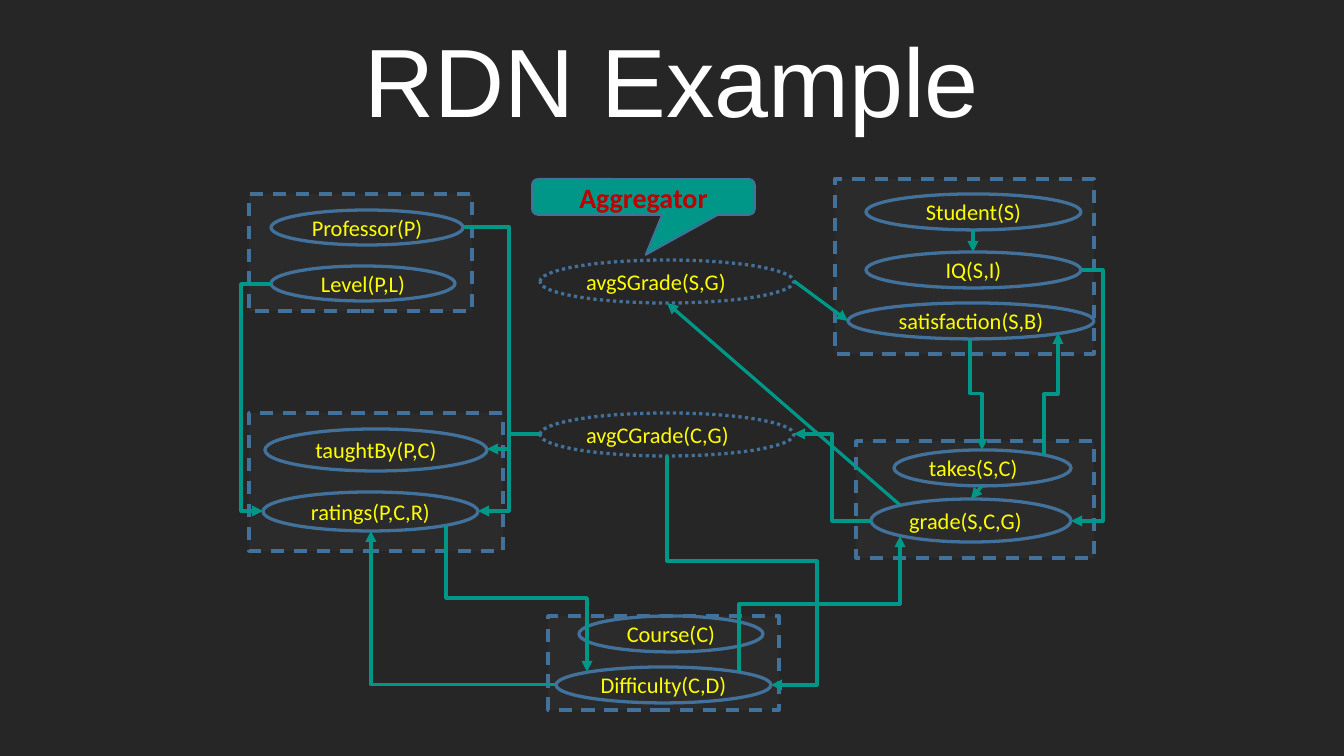
"""Build the RDN Example slide: a relational dependency network diagram."""
from lxml.etree import SubElement
from pptx import Presentation
from pptx.dml.color import RGBColor
from pptx.enum.dml import MSO_LINE
from pptx.enum.shapes import MSO_CONNECTOR as LINK, MSO_SHAPE as SHAPE
from pptx.enum.text import MSO_ANCHOR as ANCHOR, PP_ALIGN as ALIGN
from pptx.oxml.ns import qn
from pptx.util import Pt

BACKDROP = RGBColor(0x26, 0x26, 0x26)
PANEL = RGBColor(0x30, 0x30, 0x30)
OUTLINE = RGBColor(0x42, 0x71, 0x9B)
TEAL = RGBColor(0x00, 0x96, 0x88)
YELLOW = RGBColor(0xFF, 0xFF, 0x00)
RED = RGBColor(0xC0, 0x00, 0x00)
WHITE = RGBColor(0xFF, 0xFF, 0xFF)
SCALE = 914400 / 134.4


def add_box(kind, bounds, width=1.75, text="", align=ALIGN.CENTER, size=12, color=YELLOW):
    box = page.shapes.add_shape(kind, *[round(n * SCALE) for n in bounds])
    box.shadow.inherit = False
    box.fill.background()
    box.line.color.rgb = OUTLINE
    box.line.width = Pt(width)
    frame = box.text_frame
    frame.vertical_anchor = ANCHOR.MIDDLE
    frame.margin_left = frame.margin_right = round(9 * SCALE)
    frame.margin_top = frame.margin_bottom = round(5 * SCALE)
    para = frame.paragraphs[0]
    para.text = text
    para.alignment = align
    para.font.name = "Calibri"
    para.font.size = Pt(size)
    para.font.color.rgb = color
    return box


def add_arrow(kind, start, end):
    arrow = page.shapes.add_connector(kind, *[round(n * SCALE) for n in (*start, *end)])
    arrow.line.color.rgb = TEAL
    arrow.line.width = Pt(1.75)
    properties = arrow._element.spPr
    SubElement(properties.find(qn("a:ln")), qn("a:tailEnd"), type="triangle")
    SubElement(properties, qn("a:effectLst"))
    return properties


deck = Presentation()
deck.slide_width, deck.slide_height = round(1344 * SCALE), round(756 * SCALE)
page = deck.slides.add_slide(deck.slide_layouts[0])
page.background.fill.solid()
page.background.fill.fore_color.rgb = BACKDROP
subtitle = page.placeholders[1]._element
subtitle.getparent().remove(subtitle)

title = page.shapes.title
title.left, title.top, title.width, title.height = [round(n * SCALE) for n in (46, 66, 1252, 84)]
frame = title.text_frame
frame.vertical_anchor = ANCHOR.BOTTOM
frame.margin_left = frame.margin_right = frame.margin_top = frame.margin_bottom = round(13 * SCALE)
para = frame.paragraphs[0]
para.text = "RDN Example"
para.alignment = ALIGN.CENTER
para.font.name = "Arial"
para.font.size = Pt(52)
para.font.color.rgb = WHITE

groups = [
    (835, 179, 259, 175),
    (249, 194, 223, 117),
    (548, 616, 231, 94),
    (249, 413, 254, 138),
    (856, 441, 238, 117),
]
for bounds in groups:
    group = add_box(SHAPE.RECTANGLE, bounds)
    group.fill.solid()
    group.fill.fore_color.rgb = PANEL
    color = group._element.spPr.find(qn("a:solidFill")).find(qn("a:srgbClr"))
    SubElement(color, qn("a:alpha"), val="50000")
    group.line.dash_style = MSO_LINE.DASH

nodes = [
    ("Professor(P)", (271, 210, 192, 35), ALIGN.CENTER),
    ("Level(P,L)", (271, 266, 184, 35), ALIGN.CENTER),
    ("Student(S)", (866, 194, 215, 36), ALIGN.CENTER),
    ("IQ(S,I)", (866, 252, 215, 36), ALIGN.CENTER),
    ("Difficulty(C,D)", (556, 667, 215, 36), ALIGN.CENTER),
    ("Course(C)", (579, 616, 184, 36), ALIGN.CENTER),
    ("taughtBy(P,C)", (265, 429, 222, 42), ALIGN.CENTER),
    ("takes(S,C)", (894, 450, 177, 36), ALIGN.LEFT),
    ("ratings(P,C,R)", (263, 492, 215, 39), ALIGN.CENTER),
    ("satisfaction(S,B)", (848, 303, 246, 36), ALIGN.CENTER),
    ("grade(S,C,G)", (871, 499, 200, 43), ALIGN.LEFT),
]
for text, bounds, align in nodes:
    add_box(SHAPE.OVAL, bounds, text=text, align=align)

for text, top in [("avgCGrade(C,G)", 413), ("avgSGrade(S,G)", 260)]:
    average = add_box(SHAPE.OVAL, (540, top, 254, 43), text=text, align=ALIGN.LEFT)
    average.line.dash_style = MSO_LINE.ROUND_DOT

straight_arrows = [
    ((900, 505), (667, 303)),
    ((794, 281), (848, 321)),
    ((973, 230), (973, 252)),
    ((982, 486), (971, 499)),
]
for start, end in straight_arrows:
    add_arrow(LINK.STRAIGHT, start, end)

bent_arrows = [
    ("across", (271, 284), (263, 511), [241]),
    ("across", (1081, 270), (1071, 521), [1103]),
    ("across", (556, 685), (371, 531), []),
    ("across", (871, 521), (794, 434), [832]),
    ("across", (540, 434), (478, 511), [509]),
    ("across", (463, 227), (487, 449), [509]),
    ("down", (970, 339), (982, 450), [394]),
    ("down", (446, 525), (587, 672), [598]),
    ("down", (739, 672), (900, 536), [604]),
    ("down", (667, 456), (771, 685), [561, 817]),
    ("down", (1044, 455), (1058, 333), [394]),
]
for course, start, end, bends in bent_arrows:
    (x1, y1), (x2, y2) = start, end
    axes = [(x1, x2), (y1, y2)]
    if course == "down":
        axes.reverse()
        middle_x, middle_y = (x1 + x2) / 2, (y1 + y2) / 2
        half_x, half_y = (x2 - x1) / 2, (y2 - y1) / 2
        start = (middle_x - half_y, middle_y + half_x)
        end = (middle_x + half_y, middle_y - half_x)
    properties = add_arrow(LINK.ELBOW, start, end)
    if course == "down":
        properties.find(qn("a:xfrm")).set("rot", "5400000")
    geometry = properties.find(qn("a:prstGeom"))
    geometry.set("prst", f"bentConnector{len(bends) + 2}")
    guides = geometry.find(qn("a:avLst"))
    for number, (bend, (first, last)) in enumerate(zip(bends, axes), 1):
        share = round((bend - first) / (last - first) * 100000)
        name = "adj" if len(bends) == 1 else f"adj{number}"
        if len(bends) == 1:
            name = "adj1"
        SubElement(guides, qn("a:gd"), name=name, fmla=f"val {share}")

callout = add_box(SHAPE.ROUNDED_RECTANGULAR_CALLOUT, (532, 179, 223, 36), 1, "Aggregator", size=15, color=RED)
callout.fill.solid()
callout.fill.fore_color.rgb = TEAL
callout.text_frame.paragraphs[0].font.bold = True
for position, value in enumerate((0.01, 1.61, 0.17)):
    callout.adjustments[position] = value

deck.save("out.pptx")
